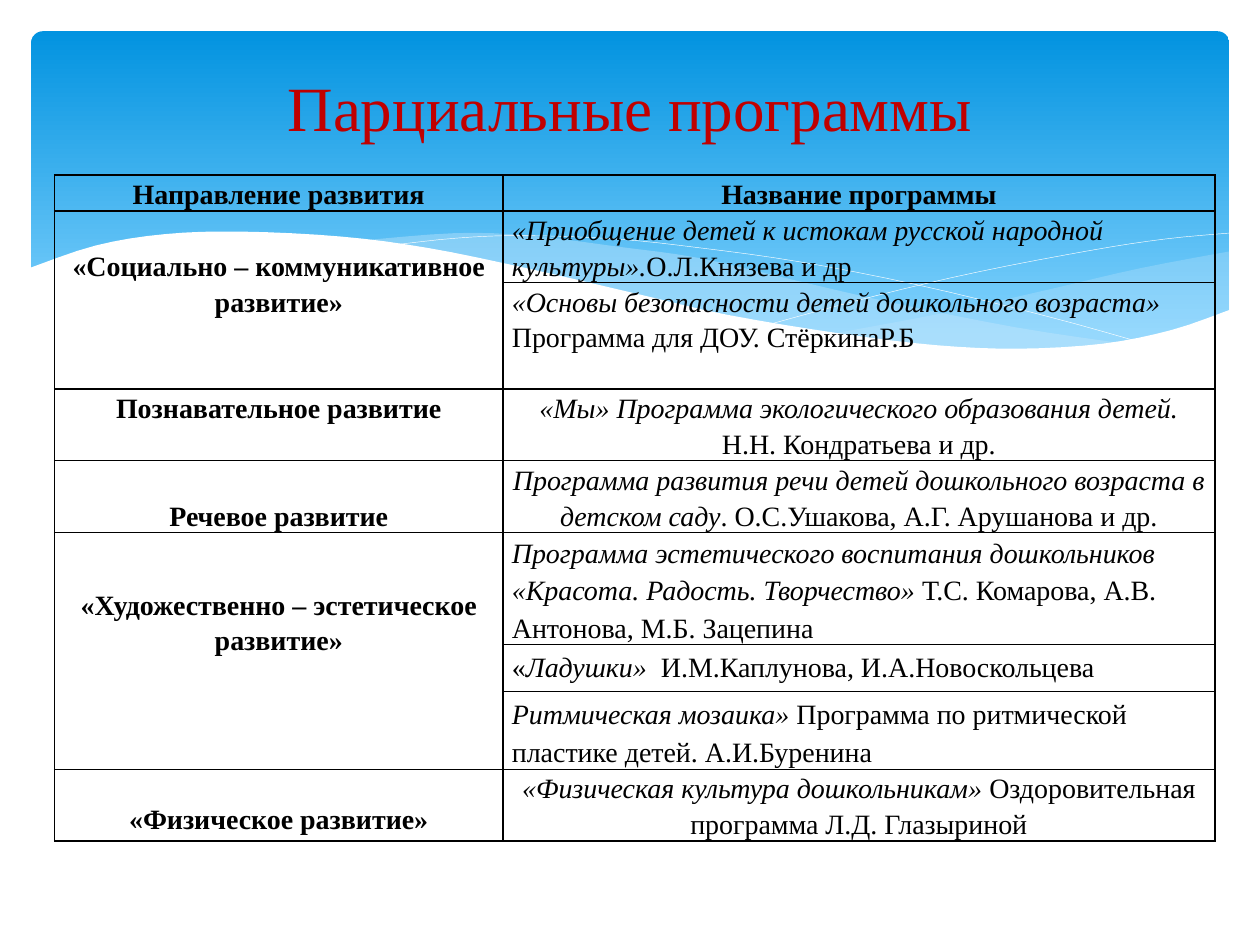
from pptx import Presentation, util as u
from pptx.dml.color import RGBColor
from pptx.enum import shapes, text
from pptx.oxml import parse_xml
from pptx.oxml.ns import qn
from lxml import etree

FONT = "Times New Roman"
MID, LEFT = text.PP_ALIGN.CENTER, text.PP_ALIGN.LEFT
NS = "http://schemas.openxmlformats.org/drawingml/2006/main"

FAR = [[(24.2, 0.4), (22.4, 0.74), (20.55, 1.17), (18.5, 1.63), (16.2, 2.06)],
       [(16.2, 2.06), (17.7, 2.24), (19.25, 2.36), (20.35, 2.36), (21.8, 2.26),
        (23, 2.01), (24.2, 1.6)]]
NEAR = [[(22.1, 2.26), (19.9, 1.93), (17.35, 1.42), (15.4, 0.97), (13.5, 0.53),
         (11.85, 0.3), (10.1, 0.08), (8.6, 0.03), (6.7, 0.18)],
        [(6.7, 0.18), (8.6, 0.48), (10.8, 0.97), (12.9, 1.42), (15.1, 1.88),
         (17.05, 2.18), (18.75, 2.36), (20.2, 2.39), (22.1, 2.26)]]
FALL = [[(7.26, 0.28), (8.64, 0.13), (10, 0.08), (11.85, 0.15), (13.55, 0.33),
         (15.55, 0.61), (17.9, 1.07), (20.5, 1.7), (22.45, 2.24)]]
RISE = [[(15, 1.85), (17.05, 1.3), (19.15, 0.81), (21.4, 0.38), (22.9, 0.15),
         (24.2, 0.03)]]
FRONT = [[(24.23, 1.57), (23.05, 1.98), (21.65, 2.26), (19.95, 2.36), (18.3, 2.29),
          (16.4, 2.06), (14.1, 1.68), (12.2, 1.24), (10.05, 0.74), (8.05, 0.33),
          (6.3, 0.1), (4.3, 0), (2.75, 0.05), (1.35, 0.28), (0, 0.74)],
         [(0, 3.68), (24.23, 3.68)]]

COLS = [9.04, 14.35]
ROWS = [0.71, 1.44, 2.15, 1.44, 1.44, 2.24, 0.95, 1.57, 1.44]
AREAS = [
    (0, 0, "Направление развития", 0),
    (1, 2, "«Социально – коммуникативное развитие»", 0.72),
    (3, 3, "Познавательное развитие", 0),
    (4, 4, "Речевое развитие", 0.72),
    (5, 7, "«Художественно – эстетическое развитие»", 1.07),
    (8, 8, "«Физическое развитие»", 0.61),
]
PLANS = [
    (LEFT, 1.15, "", "«Приобщение детей к истокам русской народной культуры».",
     "О.Л.Князева и др"),
    (LEFT, 1.15, "", "«Основы безопасности детей дошкольного возраста» ",
     "Программа для ДОУ. СтёркинаР.Б"),
    (MID, 1.15, "", "«Мы» Программа экологического образования детей.",
     " Н.Н. Кондратьева и др."),
    (MID, 1.15, "", "Программа развития речи детей дошкольного возраста в детском саду",
     ". О.С.Ушакова, А.Г. Арушанова и др."),
    (LEFT, 1.2, "",
     "Программа эстетического воспитания дошкольников «Красота. Радость. Творчество» ",
     "Т.С. Комарова, А.В. Антонова, М.Б. Зацепина"),
    (LEFT, 1.25, "«", "Ладушки»  ", "И.М.Каплунова, И.А.Новоскольцева"),
    (LEFT, 1.25, "", "Ритмическая мозаика» ",
     "Программа по ритмической пластике детей. А.И.Буренина"),
    (MID, 1.15, "", "«Физическая культура дошкольникам»",
     " Оздоровительная программа Л.Д. Глазыриной"),
]


def tint(code):
    """Return the colour for a hex string."""
    return RGBColor.from_string(code)


def style(run, size, code, bold=False, slant=False):
    """Format one run."""
    font = run.font
    font.name, font.size = FONT, u.Pt(size)
    font.bold, font.italic = bold, slant
    font.color.rgb = tint(code)


def smooth(knots, steps=4):
    """Sample a Catmull-Rom curve through the knots."""
    if len(knots) < 3:
        return knots
    ends = [knots[0], *knots, knots[-1]]
    dots = []
    for a, b, c, d in zip(ends, ends[1:], ends[2:], ends[3:]):
        for t in (i / steps for i in range(steps)):
            dots.append(tuple(
                (2 * q + (r - p) * t + (2 * p - 5 * q + 4 * r - s) * t ** 2
                 + (3 * q - p - 3 * r + s) * t ** 3) / 2
                for p, q, r, s in zip(a, b, c, d)))
    return dots + [knots[-1]]


def wave(slide, left, top, sides, fill=None, alpha=100):
    """Draw a filled wave, or a thin white curve when no fill is given."""
    dots = [(u.Cm(left + x), u.Cm(top + y)) for side in sides for x, y in smooth(side)]
    pen = slide.shapes.build_freeform(*dots[0])
    pen.add_line_segments(dots[1:], close=bool(fill))
    shape = pen.convert_to_shape()
    shape.shadow.inherit = False
    if fill:
        shape.fill.solid()
        shape.fill.fore_color.rgb = tint(fill)
        shape.line.fill.background()
        node = shape.fill._xPr.find(".//" + qn("a:srgbClr"))
        etree.SubElement(node, qn("a:alpha"), val=str(alpha * 1000))
    else:
        shape.fill.background()
        shape.line.color.rgb = tint("FFFFFF")
        shape.line.width = u.Pt(0.25)


def banner(slide, left, top, width, height):
    """Draw the blue panel with its waves."""
    box = [u.Cm(n) for n in (left, top, width, height)]
    panel = slide.shapes.add_shape(shapes.MSO_SHAPE.ROUNDED_RECTANGLE, *box)
    panel.adjustments[0] = 0.034
    panel.shadow.inherit = False
    panel.line.fill.background()
    panel.fill.gradient()
    panel.fill.gradient_angle = 270
    for stop, code, place in zip(panel.fill.gradient_stops, ("0293E0", "83D3FE"), (0, 0.9)):
        stop.color.rgb, stop.position = tint(code), place
    x, y = left - 0.05, top + 4.04
    wave(slide, x, y, FAR, "C6E7FC", 29)
    wave(slide, x, y, NEAR, "C6E7FC", 40)
    wave(slide, x, y, FALL)
    wave(slide, x, y, RISE)
    wave(slide, x, y, FRONT, "FFFFFF")


def title(slide, left, top, width, height):
    """Place the slide title."""
    frame = slide.shapes.add_textbox(*(u.Cm(n) for n in (left, top, width, height))).text_frame
    frame.word_wrap = True
    frame.vertical_anchor = text.MSO_ANCHOR.MIDDLE
    frame.text = "Парциальные программы"
    frame.paragraphs[0].alignment = MID
    style(frame.paragraphs[0].runs[0], 36, "C00000")


def clear(cell):
    """Give a cell no fill, narrow margins and black borders."""
    cell.margin_left = cell.margin_right = u.Cm(0.18)
    cell.margin_top = cell.margin_bottom = 0
    props = cell._tc.get_or_add_tcPr()
    for side in "LRTB":
        props.append(parse_xml(
            f'<a:ln{side} xmlns:a="{NS}" w="12700"><a:solidFill>'
            f'<a:srgbClr val="000000"/></a:solidFill></a:ln{side}>'))
    cell.fill.background()


def write(cell, parts, align, gap=1.15, bold=False):
    """Fill a cell with plain, slanted and plain runs."""
    para = cell.text_frame.paragraphs[0]
    para.alignment, para.line_spacing = align, gap
    for i, part in enumerate(parts):
        if part:
            run = para.add_run()
            run.text = part
            style(run, 16, "000000", bold, i == 1)


def grid(slide, left, top):
    """Build the table of areas and programmes."""
    box = [u.Cm(n) for n in (left, top, sum(COLS), sum(ROWS))]
    table = slide.shapes.add_table(len(ROWS), len(COLS), *box).table
    table.first_row = table.horz_banding = False
    for col, width in zip(table.columns, COLS):
        col.width = u.Cm(width)
    for row, height in zip(table.rows, ROWS):
        row.height = u.Cm(height)
    for cell in table.iter_cells():
        clear(cell)
    for first, last, name, drop in AREAS:
        cell = table.cell(first, 0)
        if last > first:
            cell.merge(table.cell(last, 0))
        cell.margin_top = u.Cm(drop)
        write(cell, [name], MID, bold=True)
    write(table.cell(0, 1), ["Название программы"], MID, bold=True)
    for i, (align, gap, *parts) in enumerate(PLANS, 1):
        write(table.cell(i, 1), parts, align, gap)


def main():
    """Build and save the slide."""
    deck = Presentation()
    deck.slide_width, deck.slide_height = u.Cm(25.4), u.Cm(19.05)
    slide = deck.slides.add_slide(deck.slide_layouts[6])
    banner(slide, 0.63, 0.63, 24.15, 6.86)
    grid(slide, 1.1, 3.53)
    title(slide, 1.27, 0.94, 22.86, 2.4)
    deck.save("out.pptx")


if __name__ == "__main__":
    main()
